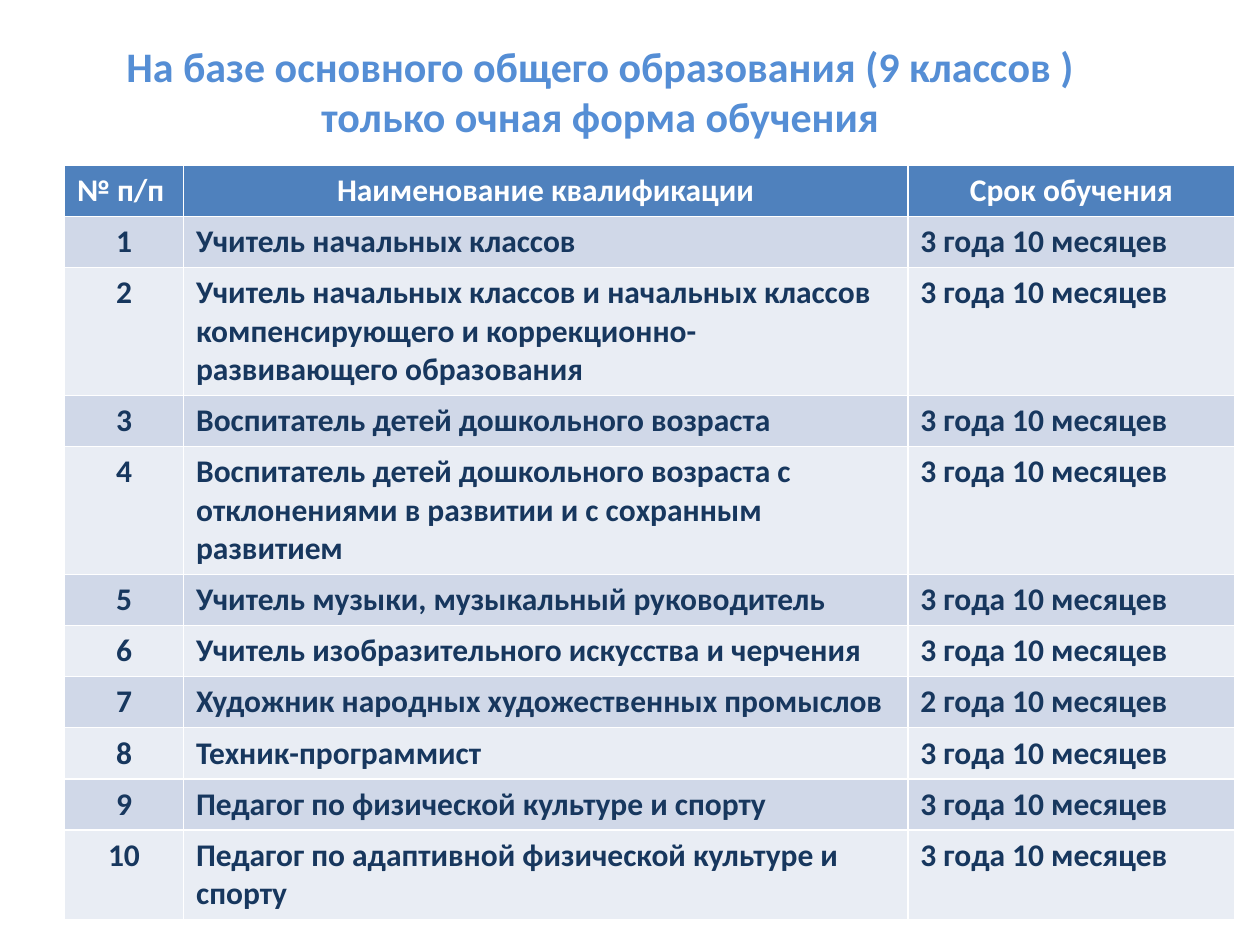
from pptx import Presentation
from pptx.dml.color import RGBColor
from pptx.enum.text import MSO_ANCHOR, PP_ALIGN
from pptx.util import Cm, Pt

LEFT, MID = PP_ALIGN.LEFT, PP_ALIGN.CENTER
CENTER = MSO_ANCHOR.MIDDLE

TITLE = "На базе основного общего образования (9 классов )\nтолько очная форма обучения"
HEAD = ("№ п/п", "Наименование квалификации", "Срок обучения")
LONG, SHORT = "3 года 10 месяцев", "2 года 10 месяцев"
JOBS = [
    ("Учитель начальных классов", LONG),
    ("Учитель начальных классов и начальных классов компенсирующего и "
     "коррекционно-развивающего образования", LONG),
    ("Воспитатель детей дошкольного возраста", LONG),
    ("Воспитатель детей дошкольного возраста с отклонениями в развитии "
     "и с сохранным развитием", LONG),
    ("Учитель музыки, музыкальный руководитель", LONG),
    ("Учитель изобразительного искусства и черчения", LONG),
    ("Художник народных художественных промыслов", SHORT),
    ("Техник-программист", LONG),
    ("Педагог по физической культуре и спорту", LONG),
    ("Педагог по адаптивной физической культуре и спорту", LONG),
]
COLORS = {
    "title": "558ED5", "head": "4F81BD", "white": "FFFFFF",
    "text": "17375E", "odd": "D0D8E8", "even": "E9EDF4",
}
WIDTHS = (2.4, 14.6, 6.6)
ROW = 1.03
EDGE = 1.3
FONT = {"name": "Calibri", "bold": True}
HEAD_ALIGN = (LEFT, MID, MID)
BODY_ALIGN = (MID, LEFT, LEFT)


def color(key):
    return RGBColor.from_string(COLORS[key])


def write(frame, text, size, ink, align):
    par = frame.paragraphs[0]
    par.text = text
    par.alignment = align
    for run in par.runs:
        for key, val in {**FONT, "size": Pt(size)}.items():
            setattr(run.font, key, val)
        run.font.color.rgb = color(ink)


def add_title(slide):
    title = slide.shapes.title
    place = {"left": EDGE, "top": 0.53, "width": 21.6, "height": 2.6}
    for key, val in place.items():
        setattr(title, key, Cm(val))
    title.text_frame.vertical_anchor = CENTER
    write(title.text_frame, TITLE, 24, "title", MID)


def add_jobs(slide):
    rows = [HEAD] + [(str(num), *job) for num, job in enumerate(JOBS, 1)]
    table = slide.shapes.add_table(
        len(rows), len(HEAD), Cm(EDGE), Cm(3.33),
        Cm(sum(WIDTHS)), Cm(ROW * len(rows))).table
    for col, width in zip(table.columns, WIDTHS):
        col.width = Cm(width)
    for num, row in enumerate(rows):
        table.rows[num].height = Cm(ROW)
        fill = "head" if num == 0 else "odd" if num % 2 else "even"
        ink = "text" if num else "white"
        aligns = BODY_ALIGN if num else HEAD_ALIGN
        for pos, (text, align) in enumerate(zip(row, aligns)):
            cell = table.cell(num, pos)
            cell.fill.solid()
            cell.fill.fore_color.rgb = color(fill)
            write(cell.text_frame, text, 18, ink, align)


def main():
    deck = Presentation()
    deck.slide_width, deck.slide_height = Cm(25.4), Cm(19.05)
    slide = deck.slides.add_slide(deck.slide_layouts[5])
    add_title(slide)
    add_jobs(slide)
    deck.save("out.pptx")


if __name__ == "__main__":
    main()
